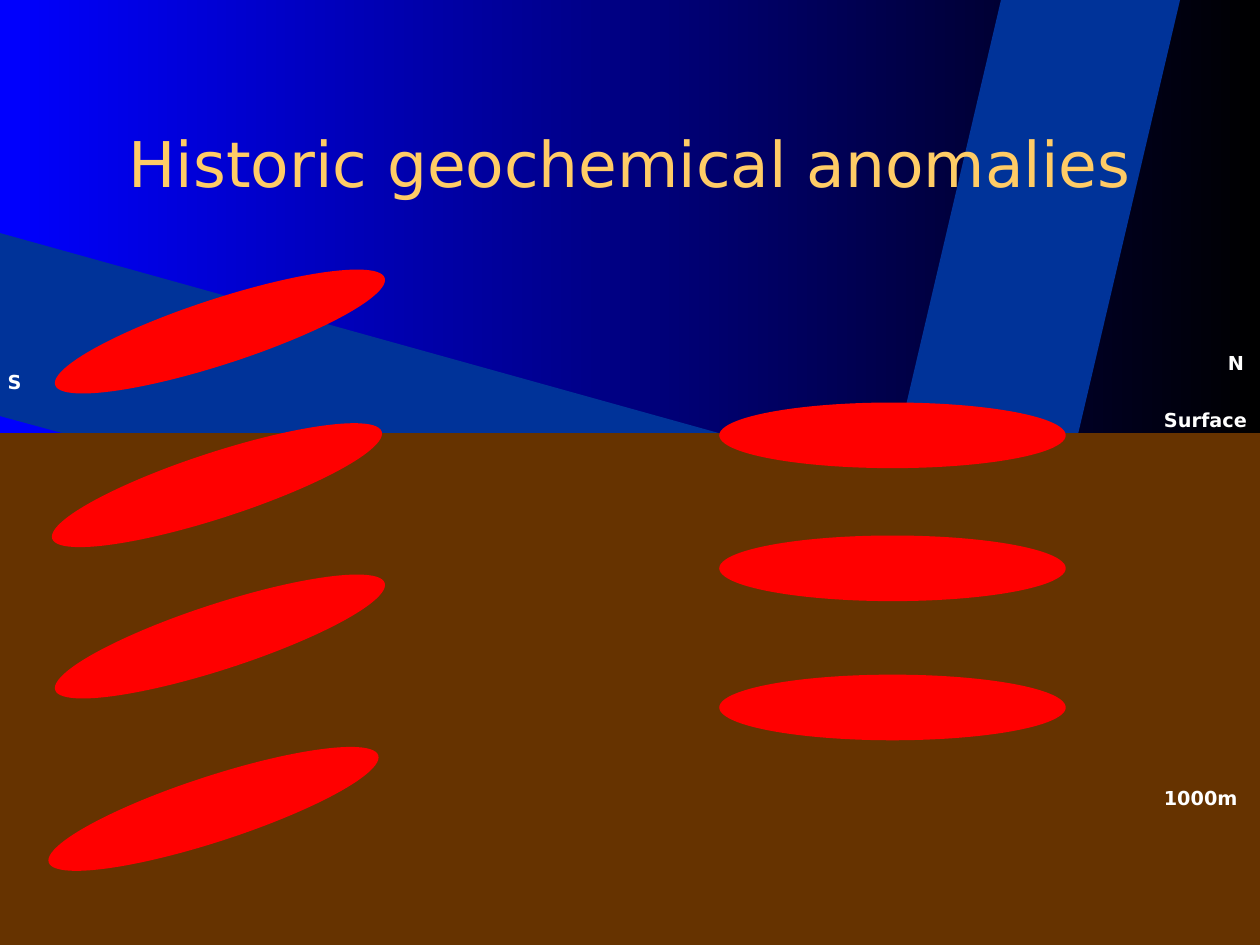
from pptx import Presentation
from pptx.dml.color import RGBColor
from pptx.enum.shapes import MSO_SHAPE as Preset
from pptx.enum.text import MSO_ANCHOR as Anchor, MSO_AUTO_SIZE as AutoSize, PP_ALIGN as Align
from pptx.util import Pt


def paint(fill, color):
    fill.solid()
    fill.fore_color.rgb = RGBColor.from_string(color)


def add_flat_shape(preset, left, top, width, height, color):
    shape = page.shapes.add_shape(preset, Pt(left), Pt(top), Pt(width), Pt(height))
    shape.shadow.inherit = False
    paint(shape.fill, color)
    shape.line.fill.background()
    return shape


deck = Presentation()
deck.slide_width, deck.slide_height = Pt(720), Pt(540)
page = deck.slides.add_slide(deck.slide_layouts[5])

sky = page.background.fill
sky.gradient()
sky.gradient_angle = 0
for stop, color, position in zip(sky.gradient_stops, ("0000FF", "000000"), (0, 1)):
    stop.color.rgb = RGBColor.from_string(color)
    stop.position = position

bands = [
    [(674.5, -0.7), (572.5, -2), (445, 542), (547, 542)],
    [(-0.7, 133), (-3, 237), (726, 435), (727, 335.5)],
]
for corners in bands:
    points = [(Pt(x), Pt(y)) for x, y in corners]
    builder = page.shapes.build_freeform(*points[0], scale=1.0)
    builder.add_line_segments(points[1:], close=True)
    band = builder.convert_to_shape()
    band.shadow.inherit = False
    paint(band.fill, "003399")
    band.line.fill.background()

add_flat_shape(Preset.RECTANGLE, 0, 247.5, 720, 292.5, "663300")

title = page.shapes.title
title.left, title.top, title.width, title.height = Pt(54), Pt(48), Pt(612), Pt(90)
frame = title.text_frame
frame.text = "Historic geochemical anomalies"
frame.vertical_anchor = Anchor.MIDDLE
frame.auto_size = AutoSize.NONE
para = frame.paragraphs[0]
para.alignment = Align.CENTER
span = para.runs[0]
span.font.name, span.font.size = "DejaVu Sans", Pt(36)
paint(span.font.fill, "FFCC66")
page.shapes._spTree.append(title._element)

anomalies = [
    (26.7, 170.7, 342), (25, 258.5, 342), (26.7, 345, 342), (23, 443.5, 342),
    (411, 230, 0), (411, 306, 0), (411, 385.5, 0),
]
for left, top, rotation in anomalies:
    anomaly = add_flat_shape(Preset.OVAL, left, top, 198, 37.5, "FF0000")
    anomaly.rotation = rotation

labels = [
    ("Surface", 658, 229.7, 62), ("N", 694.5, 197.3, 24),
    ("S", -2.7, 208, 22), ("1000m", 658, 445.7, 58),
]
for text, left, top, width in labels:
    box = page.shapes.add_textbox(Pt(left), Pt(top), Pt(width), Pt(21))
    frame = box.text_frame
    frame.word_wrap = False
    frame.auto_size = AutoSize.SHAPE_TO_FIT_TEXT
    frame.text = text
    span = frame.paragraphs[0].runs[0]
    span.font.name, span.font.size, span.font.bold = "DejaVu Sans", Pt(11), True
    paint(span.font.fill, "FFFFFF")

deck.save("out.pptx")
